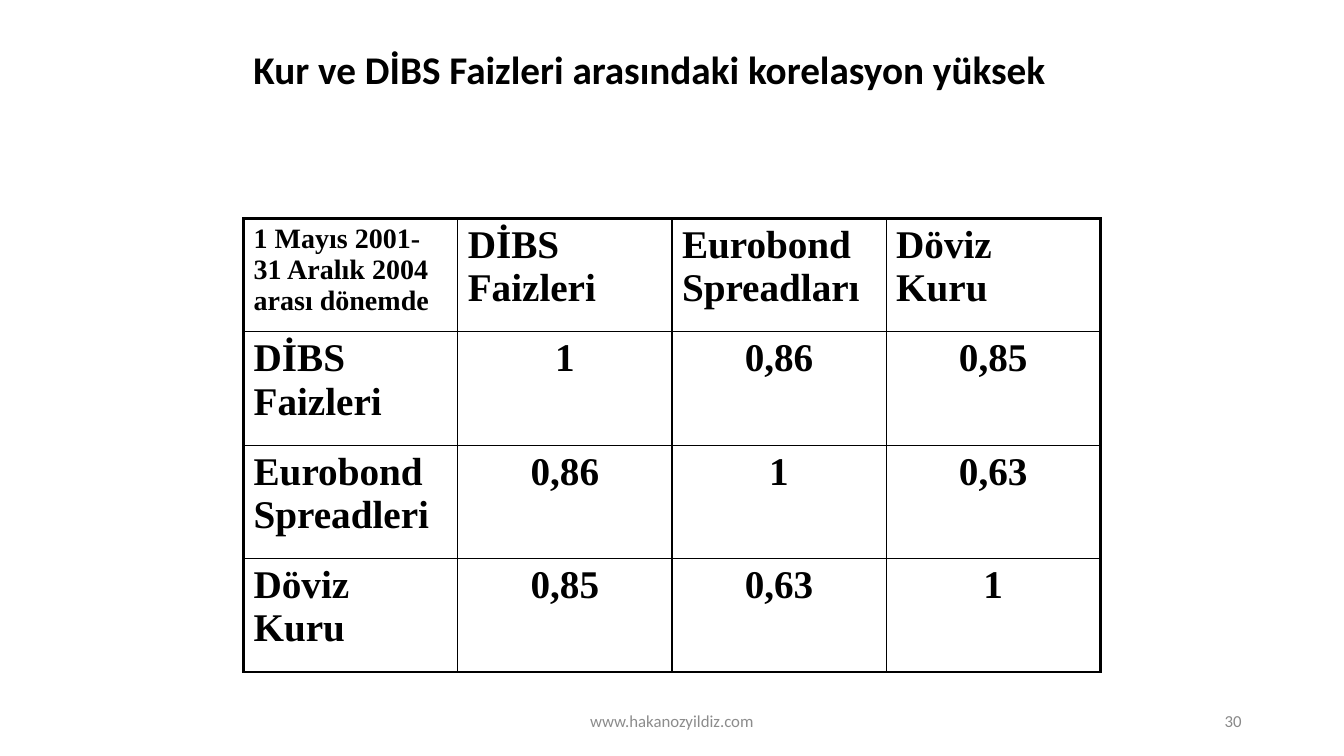
from lxml.etree import SubElement
from pptx import Presentation
from pptx.dml.color import RGBColor
from pptx.enum.text import MSO_ANCHOR, PP_ALIGN
from pptx.oxml.ns import qn
from pptx.util import Pt

BLACK = "000000"
SERIF = "Times New Roman"


def style(para, size, color, font="Calibri", bold=False, align=PP_ALIGN.LEFT):
    para.alignment = align
    for run in para.runs:
        run.font.size = Pt(size)
        run.font.name = font
        run.font.bold = bold
        run.font.color.rgb = RGBColor.from_string(color)


def border(cell, side, width):
    """Draw one cell edge; side is L, R, T or B."""
    line = SubElement(cell._tc.get_or_add_tcPr(), qn("a:ln" + side), w=str(Pt(width)))
    fill = SubElement(line, qn("a:solidFill"))
    SubElement(fill, qn("a:srgbClr"), val=BLACK)


deck = Presentation()
deck.slide_width, deck.slide_height = Pt(960), Pt(540)
slide = deck.slides.add_slide(deck.slide_layouts[6])

# Title, footer and page number
labels = [
    ("Kur ve DİBS Faizleri arasındaki korelasyon yüksek",
     (174, 18, 612, 66), 28, BLACK, True, PP_ALIGN.LEFT),
    ("www.hakanozyildiz.com", (318, 500.5, 324, 28.75), 12, "8C8C8C", False, PP_ALIGN.CENTER),
    ("30", (678, 500.5, 216, 28.75), 12, "898989", False, PP_ALIGN.RIGHT),
]
for text, place, size, color, bold, align in labels:
    frame = slide.shapes.add_textbox(*map(Pt, place)).text_frame
    frame.word_wrap = True
    frame.vertical_anchor = MSO_ANCHOR.MIDDLE
    frame.text = text
    style(frame.paragraphs[0], size, color, bold=bold, align=align)
    if bold:
        frame.paragraphs[0].line_spacing = 0.9

# Correlation table
rows = [
    ["1 Mayıs 2001- 31 Aralık 2004 arası dönemde", "DİBS Faizleri",
     "Eurobond Spreadları", "Döviz Kuru"],
    ["DİBS Faizleri", "1", "0,86", "0,85"],
    ["Eurobond Spreadleri", "0,86", "1", "0,63"],
    ["Döviz Kuru", "0,85", "0,63", "1"],
]
count = len(rows)
last = count - 1
table = slide.shapes.add_table(
    count, count, Pt(174), Pt(156), Pt(612), Pt(324)).table
table.first_row = table.horz_banding = False

for r, row in enumerate(rows):
    for c, text in enumerate(row):
        cell = table.cell(r, c)
        edges = {"L": c == 0, "R": c == last, "T": r == 0, "B": r == last}
        for side, outer in edges.items():
            border(cell, side, 2.25 if outer else 1)
        cell.fill.background()
        cell.text = text
        style(cell.text_frame.paragraphs[0], 20 if r == c == 0 else 28, BLACK, SERIF, True,
              PP_ALIGN.CENTER if r and c else PP_ALIGN.LEFT)

deck.save("out.pptx")
